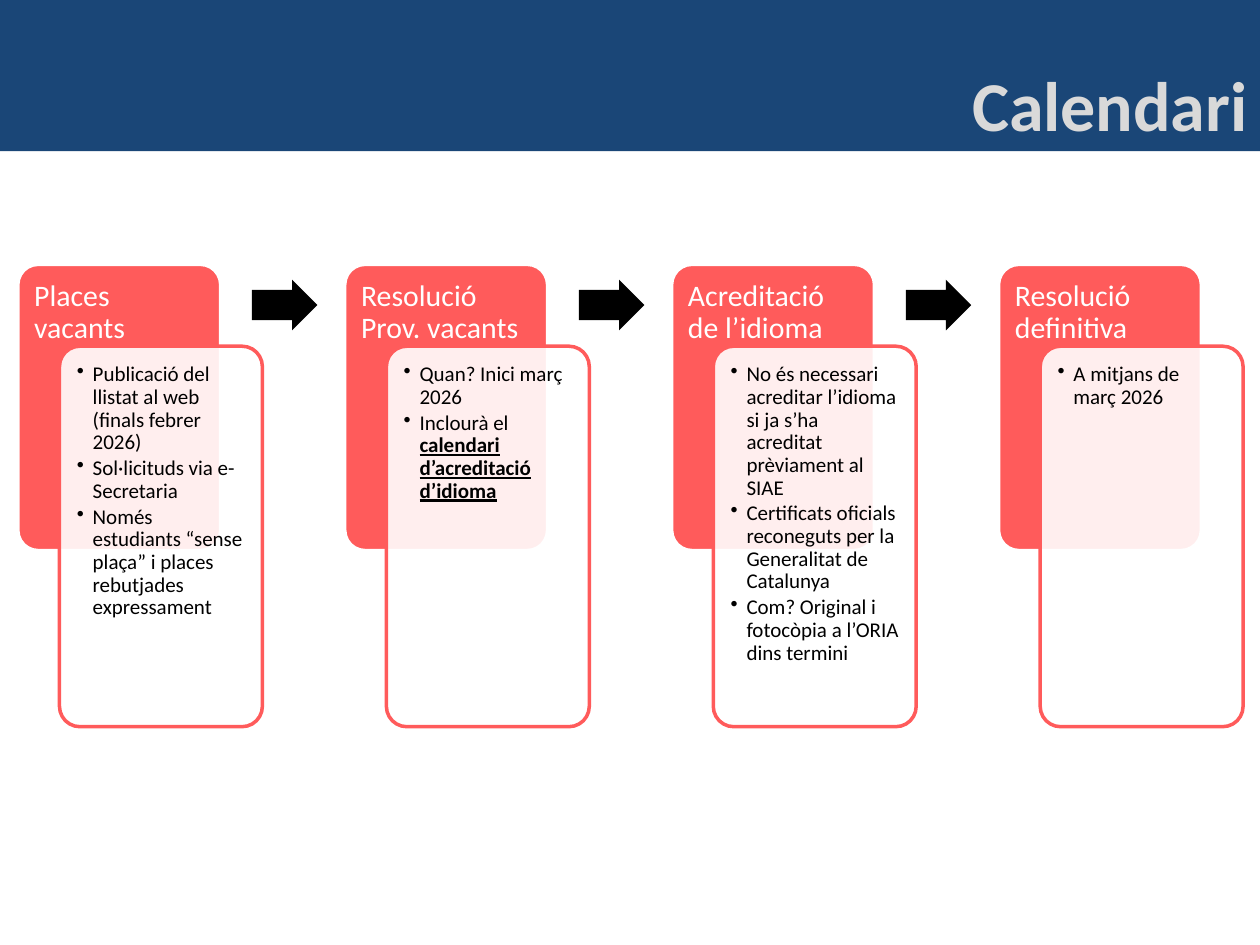
from lxml import etree
from pptx import Presentation
from pptx import util as u
from pptx.dml.color import RGBColor
from pptx.enum import shapes, text
from pptx.oxml.ns import qn

NAVY, CORAL, WHITE, BLACK, GREY = "1A4677", "FF5B5B", "FFFFFF", "000000", "D9D9D9"
FONT = "Calibri"

# Each stage: heading, then bullets as (plain text, emphasised ending)
STAGES = [
    ("Places vacants", [
        ("Publicació del llistat al web (finals febrer 2026)", ""),
        ("Sol·licituds via e-Secretaria", ""),
        ("Només estudiants “sense plaça” i places rebutjades expressament", ""),
    ]),
    ("Resolució Prov. vacants", [
        ("Quan? Inici març 2026", ""),
        ("Inclourà el ", "calendari d’acreditació d’idioma"),
    ]),
    ("Acreditació de l’idioma", [
        ("No és necessari acreditar l’idioma si ja s’ha acreditat prèviament al SIAE", ""),
        ("Certificats oficials reconeguts per la Generalitat de Catalunya", ""),
        ("Com? Original i fotocòpia a l’ORIA dins termini", ""),
    ]),
    ("Resolució definitiva", [("A mitjans de març 2026", "")]),
]

# Layout in centimetres
FIRST_LEFT, STEP, TOP = 0.36, 6.59, 5.33
CARD_WIDTH, CARD_HEIGHT, HEADING_HEIGHT = 4.09, 5.77, 1.65
DETAIL_SHIFT, DETAIL_HEIGHT, DETAIL_MARGIN = 0.84, 7.67, 0.12


def colour(hex_value):
    return RGBColor.from_string(hex_value)


def box(left, top, width, height):
    return [u.Cm(value) for value in (left, top, width, height)]


def add_block(slide, kind, place, fill, line=None, adjustments=(), opacity=None):
    block = slide.shapes.add_shape(kind, *box(*place))
    block.shadow.inherit = False
    for index, value in enumerate(adjustments):
        block.adjustments[index] = value
    block.fill.solid()
    block.fill.fore_color.rgb = colour(fill)
    if opacity is not None:
        tint = block.fill._xPr.find(qn("a:solidFill"))[0]
        etree.SubElement(tint, qn("a:alpha"), val=str(opacity * 1000))
    if line:
        block.line.color.rgb = colour(line)
        block.line.width = u.Pt(2)
    else:
        block.line.fill.background()


def add_text_frame(slide, place, insets):
    frame = slide.shapes.add_textbox(*box(*place)).text_frame
    frame.word_wrap = True
    (frame.margin_left, frame.margin_top,
     frame.margin_right, frame.margin_bottom) = box(*insets)
    return frame


def style(font, size, hex_value, bold=False):
    font.name, font.size, font.bold = FONT, u.Pt(size), bold
    font.color.rgb = colour(hex_value)


def set_bullet(paragraph):
    properties = paragraph._p.get_or_add_pPr()
    properties.set("marL", str(u.Cm(0.32)))
    properties.set("indent", str(-u.Cm(0.32)))
    etree.SubElement(properties, qn("a:buChar"), char="•")


def add_heading(slide, place, wording):
    frame = add_text_frame(slide, place, (0.33, 0.33, 0.33, 0.18))
    frame.text = wording
    heading = frame.paragraphs[0]
    heading.line_spacing = 0.9
    style(heading.runs[0].font, 17, WHITE)


def add_bullets(slide, place, bullets):
    frame = add_text_frame(slide, place, (0.23, 0.23, 0.23, 0.23))
    for index, (plain, emphasised) in enumerate(bullets):
        bullet = frame.add_paragraph() if index else frame.paragraphs[0]
        bullet.text = plain
        set_bullet(bullet)
        bullet.line_spacing = 0.9
        bullet.space_after = u.Pt(1.8)
        style(bullet.runs[0].font, 12, BLACK)
        if emphasised:
            ending = bullet.add_run()
            ending.text = emphasised
            style(ending.font, 12, BLACK, bold=True)
            ending.font.underline = True


def add_stage(slide, left, heading, bullets):
    rounded = shapes.MSO_SHAPE.ROUNDED_RECTANGLE
    # Coral card with its heading
    add_block(slide, rounded, (left, TOP, CARD_WIDTH, CARD_HEIGHT),
              CORAL, WHITE, [0.1])
    add_heading(slide, (left, TOP, CARD_WIDTH, HEADING_HEIGHT), heading)
    # Translucent detail card with its bullets
    detail_left, detail_top = left + DETAIL_SHIFT, TOP + HEADING_HEIGHT
    add_block(slide, rounded, (detail_left, detail_top, CARD_WIDTH, DETAIL_HEIGHT),
              WHITE, CORAL, [0.1], opacity=90)
    add_bullets(slide, (detail_left + DETAIL_MARGIN, detail_top + DETAIL_MARGIN,
                        CARD_WIDTH - 2 * DETAIL_MARGIN,
                        DETAIL_HEIGHT - 2 * DETAIL_MARGIN), bullets)


def add_title(slide, wording):
    frame = add_text_frame(slide, (7.49, 1.12, 17.91, 1.96), (0.25, 0.13, 0.25, 0.13))
    frame.text = wording
    title = frame.paragraphs[0]
    title.alignment = text.PP_ALIGN.RIGHT
    style(title.runs[0].font, 40, GREY, bold=True)


def main():
    deck = Presentation()
    deck.slide_width, deck.slide_height = u.Cm(25.4), u.Cm(19.05)
    slide = deck.slides.add_slide(deck.slide_layouts[6])

    # Header band
    add_block(slide, shapes.MSO_SHAPE.RECTANGLE, (0, 0, 25.4, 3.05), NAVY)

    # Stages, with an arrow to each following one
    for index, (heading, bullets) in enumerate(STAGES):
        left = FIRST_LEFT + index * STEP
        add_stage(slide, left, heading, bullets)
        if index < len(STAGES) - 1:
            add_block(slide, shapes.MSO_SHAPE.RIGHT_ARROW,
                      (left + 4.72, 5.64, 1.32, 1.02), BLACK, adjustments=[0.6, 0.5])

    add_title(slide, "Calendari")
    deck.save("out.pptx")


if __name__ == "__main__":
    main()
